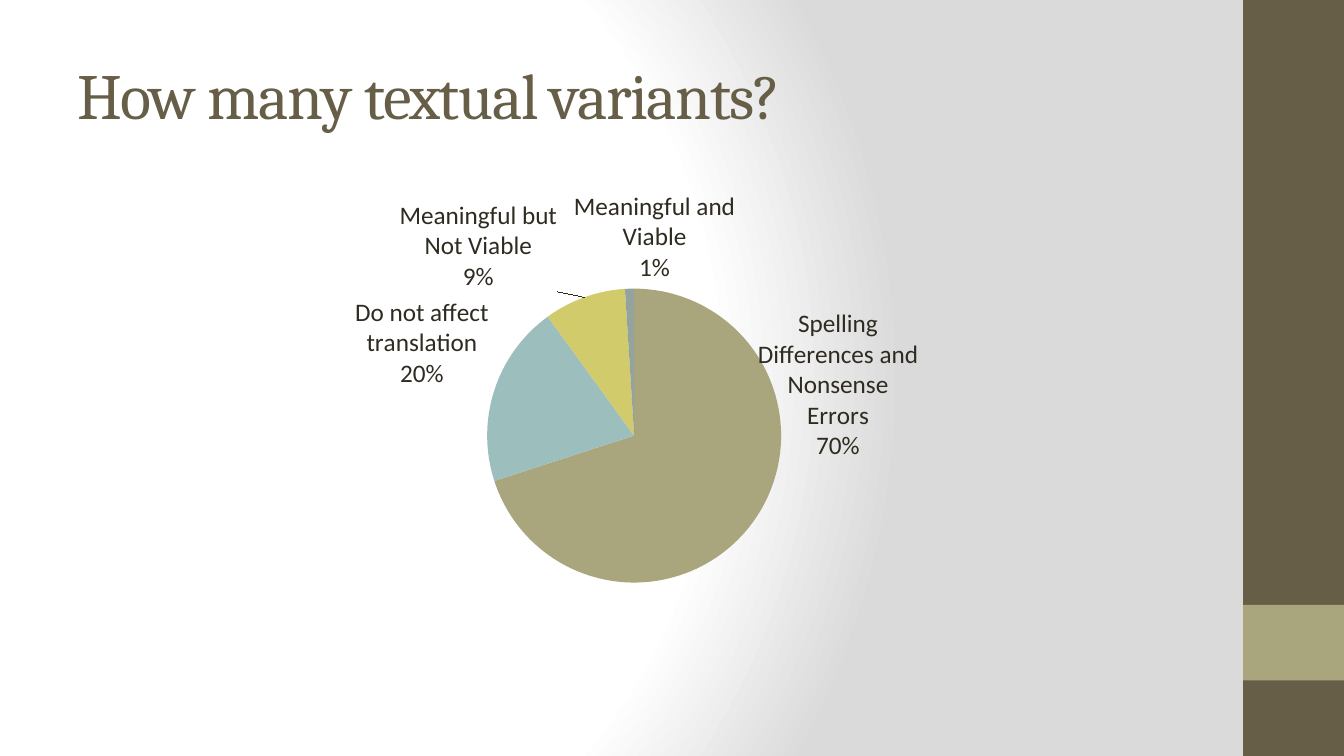
from copy import deepcopy
from dataclasses import dataclass

from lxml.etree import SubElement
from pptx import Presentation
from pptx.chart.data import CategoryChartData
from pptx.dml.color import RGBColor
from pptx.enum.chart import XL_CHART_TYPE, XL_LABEL_POSITION
from pptx.enum.shapes import MSO_SHAPE
from pptx.enum.text import MSO_ANCHOR
from pptx.oxml import parse_xml
from pptx.oxml.ns import nsdecls, qn
from pptx.util import Pt


@dataclass(frozen=True)
class Theme:
    brown: str = "675E47"
    khaki: str = "A9A57C"
    ink: str = "2F2B20"
    white: str = "FFFFFF"
    grey: str = "DADADA"
    slices: tuple = ("A9A57C", "9CBEBD", "D2CB6C", "95A39D")
    heading: str = "Cambria"
    body: str = "Calibri"
    title_size: int = 46
    label_size: int = 18


THEME = Theme()
VARIANTS = {
    "Spelling Differences and Nonsense Errors": 70,
    "Do not affect translation": 20,
    "Meaningful but Not Viable": 9,
    "Meaningful and Viable": 1,
}
PIE_AREA = {"x": 0.32, "y": 0.21, "w": 0.35, "h": 0.56}
LABEL_SHIFTS = {0: {"x": 0, "y": -0.41}}


def rgb(color):
    return RGBColor.from_string(color)


def style_font(font, name, size, color):
    font.name = name
    font.size = Pt(size)
    font.color.rgb = rgb(color)


def set_background(s):
    s.background.fill.solid()
    bg = s.element.find(".//" + qn("p:bgPr"))
    stops = ((0, THEME.white), (75, THEME.white), (100, THEME.grey))
    gs = "".join(
        f'<a:gs pos="{pos * 1000}"><a:srgbClr val="{color}"/></a:gs>'
        for pos, color in stops
    )
    grad = parse_xml(
        f'<a:gradFill {nsdecls("a")} rotWithShape="1"><a:gsLst>{gs}</a:gsLst>'
        '<a:path path="circle"><a:fillToRect l="20000" t="50000" r="100000" b="50000"/>'
        "</a:path></a:gradFill>"
    )
    bg.replace(bg.find(qn("a:solidFill")), grad)


def add_band(s, top, height, color):
    sp = s.shapes.add_shape(MSO_SHAPE.RECTANGLE, Pt(888), Pt(top), Pt(72), Pt(height))
    sp.shadow.inherit = False
    sp.fill.solid()
    sp.fill.fore_color.rgb = rgb(color)
    sp.line.fill.background()


def add_title(s, text):
    tf = s.shapes.add_textbox(Pt(48), Pt(21.6), Pt(800), Pt(90)).text_frame
    tf.word_wrap = True
    tf.vertical_anchor = MSO_ANCHOR.MIDDLE
    tf.text = text
    r = tf.paragraphs[0].runs[0]
    style_font(r.font, THEME.heading, THEME.title_size, THEME.brown)
    r.font._element.set("spc", "-100")


def manual_layout(fractions, target=""):
    values = "".join(f'<c:{k} val="{v}"/>' for k, v in fractions.items())
    return parse_xml(
        f'<c:layout {nsdecls("c")}><c:manualLayout>{target}{values}'
        "</c:manualLayout></c:layout>"
    )


def add_pie(s, shares):
    data = CategoryChartData(number_format="General")
    data.categories = list(shares)
    data.add_series("Series 1", list(shares.values()))
    chart = s.shapes.add_chart(
        XL_CHART_TYPE.PIE, Pt(156), Pt(126), Pt(600), Pt(378), data
    ).chart
    chart.has_legend = False
    chart.has_title = False
    style_font(chart.font, THEME.body, THEME.label_size, THEME.ink)
    plot = chart.plots[0]
    plot.vary_by_categories = True
    for i, color in enumerate(THEME.slices):
        fill = plot.series[0].points[i].format.fill
        fill.solid()
        fill.fore_color.rgb = rgb(color)
    area = chart._chartSpace.find(".//" + qn("c:plotArea"))
    for layout in area.findall(qn("c:layout")):
        area.remove(layout)
    edges = '<c:layoutTarget val="inner"/><c:xMode val="edge"/><c:yMode val="edge"/>'
    area.insert(0, manual_layout(PIE_AREA, edges))
    label_slices(plot.series[0].data_labels)


def label_slices(labels):
    labels.show_category_name = True
    labels.show_percentage = True
    labels.show_value = False
    labels.number_format = "0%"
    labels.number_format_is_linked = False
    labels.position = XL_LABEL_POSITION.BEST_FIT
    style_font(labels.font, THEME.body, THEME.label_size, THEME.ink)
    el = labels._element
    for leader in el.findall(qn("c:showLeaderLines")):
        el.remove(leader)
    SubElement(el, qn("c:separator")).text = "\n"
    settings = list(el)
    SubElement(el, qn("c:showLeaderLines")).set("val", "1")
    for n, (i, shift) in enumerate(LABEL_SHIFTS.items()):
        label = parse_xml(f'<c:dLbl {nsdecls("c")}><c:idx val="{i}"/></c:dLbl>')
        label.append(manual_layout(shift))
        label.extend(deepcopy(settings))
        el.insert(n, label)


def main():
    """Build the textual variants slide."""
    prs = Presentation()
    prs.slide_width, prs.slide_height = Pt(960), Pt(540)
    s = prs.slides.add_slide(prs.slide_layouts[6])
    set_background(s)
    add_band(s, 0, 540, THEME.brown)
    add_band(s, 432, 54, THEME.khaki)
    add_title(s, "How many textual variants?")
    add_pie(s, VARIANTS)
    prs.save("out.pptx")


if __name__ == "__main__":
    main()
